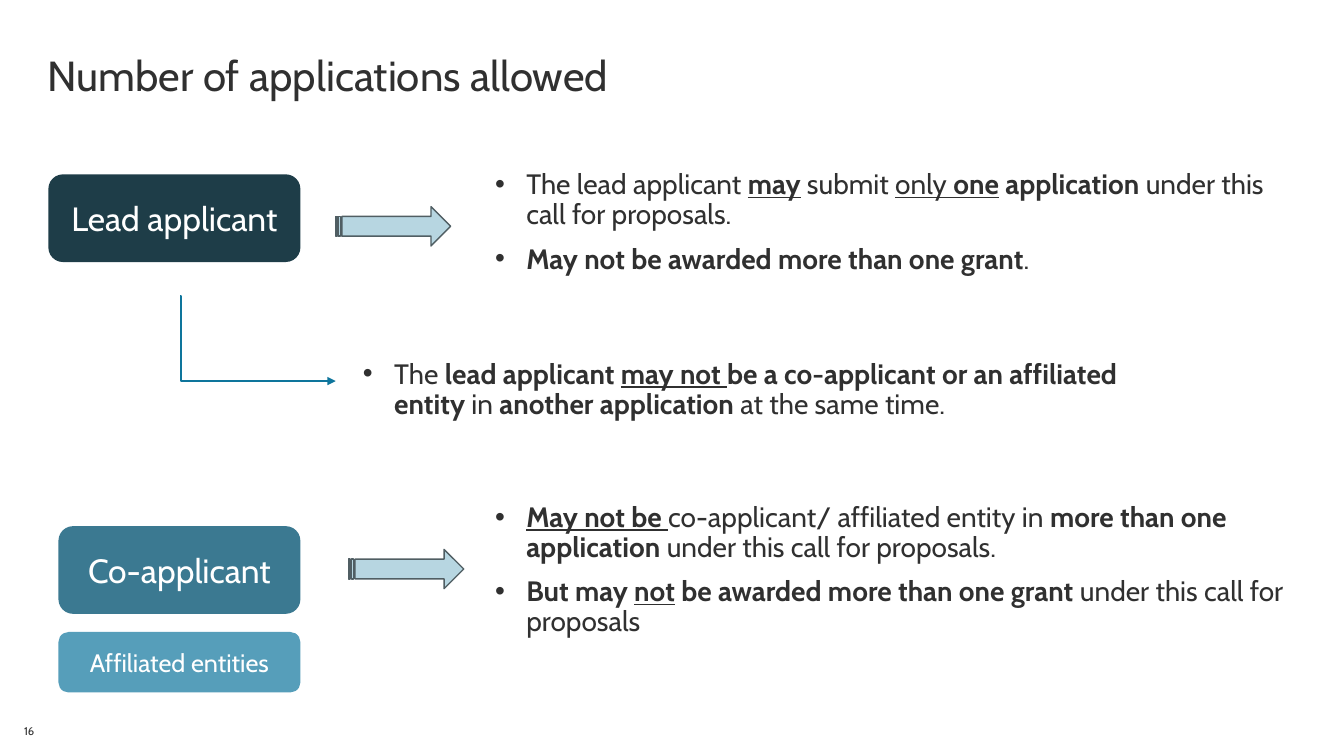
from lxml.etree import SubElement
from pptx import Presentation
from pptx.dml.color import RGBColor
from pptx.enum.shapes import MSO_CONNECTOR, MSO_SHAPE
from pptx.enum.text import MSO_ANCHOR, PP_ALIGN
from pptx.oxml.ns import qn
from pptx.util import Inches, Pt

FONT, INK, WHITE = "Cabin", "303030", "FFFFFF"

LABELS = [
    ((0.39, 0.51, 12.55, 0.58), "Number of applications allowed", 30, MSO_ANCHOR.TOP, (0.08, 0.04)),
    ((0.14, 6.97, 0.56, 0.4), "16", 8, MSO_ANCHOR.BOTTOM, (0.1, 0.05)),
]
ROLES = [
    ("Lead applicant", (0.48, 1.73, 2.5, 0.87), "1E3D48", 24),
    ("Co-applicant", (0.58, 5.22, 2.4, 0.87), "3B7991", 24),
    ("Affiliated entities", (0.58, 6.27, 2.4, 0.6), "569EBA", 18),
]
ARROWS = [((3.33, 2.05, 1.14, 0.39),), ((3.46, 5.45, 1.14, 0.39),)]
BRANCH = (1.79, 2.94, 3.33, 3.78)
RULES = [
    ((4.83, 1.65, 8.11, 1.59), [
        [("The lead applicant ", ""), ("may", "bu"), (" submit ", ""), ("only ", "u"), ("one", "bu"),
         (" application ", "b"), ("under this call for proposals.", "")],
        [("May not be awarded more than one grant", "b"), (".", "")],
    ]),
    ((3.52, 3.53, 8.11, 0.84), [
        [("The ", ""), ("lead applicant ", "b"), ("may not ", "bu"),
         ("be a co-applicant or an affiliated entity ", "b"), ("in ", ""),
         ("another application ", "b"), ("at the same time.", "")],
    ]),
    ((4.83, 4.95, 8.11, 1.59), [
        [("May not be ", "bu"), ("co-applicant/ affiliated entity in ", ""),
         ("more than one application ", "b"), ("under this call for proposals.", "")],
        [("But may ", "b"), ("not", "bu"), (" be awarded more than one grant ", "b"),
         ("under this call for proposals", "")],
    ]),
]


def color(code):
    """Turn a hex string into a colour."""
    return RGBColor.from_string(code)


def set_all(target, values):
    """Set attributes from a dict of format values."""
    for name, value in values.items():
        setattr(target, name, value)


def set_frame(box, anchor, inset):
    """Prepare the text frame of a box and return it."""
    across, down = map(Inches, inset)
    set_all(box.text_frame, {
        "word_wrap": True, "vertical_anchor": anchor, "margin_left": across,
        "margin_right": across, "margin_top": down, "margin_bottom": down})
    return box.text_frame


def add_span(para, text, size, code, style=""):
    """Add a run; style holds b for bold and u for underline."""
    span = para.add_run()
    span.text = text
    set_all(span.font, {"name": FONT, "size": Pt(size), "bold": "b" in style, "underline": "u" in style})
    span.font.color.rgb = color(code)


def add_label(page, place, text, size, anchor, inset):
    """Add a single line of text."""
    box = page.shapes.add_textbox(*map(Inches, place))
    para = set_frame(box, anchor, inset).paragraphs[0]
    para.line_spacing = 0.9
    add_span(para, text, size, INK)


def add_filled_shape(page, kind, place, code):
    """Add a preset shape with a flat fill and no line."""
    shape = page.shapes.add_shape(kind, *map(Inches, place))
    shape.shadow.inherit = False
    shape.fill.solid()
    shape.fill.fore_color.rgb = color(code)
    shape.line.fill.background()
    return shape


def add_role(page, text, place, code, size):
    """Add a rounded box naming a role."""
    shape = add_filled_shape(page, MSO_SHAPE.ROUNDED_RECTANGLE, place, code)
    para = set_frame(shape, MSO_ANCHOR.MIDDLE, (0.13, 0.13)).paragraphs[0]
    para.alignment = PP_ALIGN.CENTER
    add_span(para, text, size, WHITE)


def add_arrow(page, place):
    """Add a striped block arrow."""
    arrow = add_filled_shape(page, MSO_SHAPE.STRIPED_RIGHT_ARROW, place, "B7D6E1")
    arrow.line.color.rgb = color("505E63")
    arrow.line.width = Pt(1)


def add_branch(page, ends):
    """Add the elbow arrow that drops first and then runs right."""
    branch = page.shapes.add_connector(MSO_CONNECTOR.ELBOW, *map(Inches, ends))
    branch.line.color.rgb = color("0E759C")
    branch.line.width = Pt(1.5)
    properties = branch.element.spPr
    SubElement(properties.find(qn("a:ln")), qn("a:tailEnd"), type="triangle")
    SubElement(properties, qn("a:effectLst"))
    guides = properties.find(qn("a:prstGeom")).get_or_add_avLst()
    SubElement(guides, qn("a:gd"), name="adj1", fmla="val 400")


def add_rules(page, place, items):
    """Add a bulleted list of rules."""
    box = page.shapes.add_textbox(*map(Inches, place))
    frame = set_frame(box, MSO_ANCHOR.TOP, (0.08, 0.04))
    for index, spans in enumerate(items):
        para = frame.add_paragraph() if index else frame.paragraphs[0]
        set_all(para, {"line_spacing": 0.9, "space_before": Pt(10)})
        properties = para._p.get_or_add_pPr()
        properties.set("marL", str(Inches(0.31)))
        properties.set("indent", str(-Inches(0.31)))
        SubElement(properties, qn("a:buFont"), typeface="Arial")
        SubElement(properties, qn("a:buChar"), char="•")
        for text, style in spans:
            add_span(para, text, 20, INK, style)


def main():
    """Build the slide and save it."""
    deck = Presentation()
    set_all(deck, {"slide_width": Inches(13.33), "slide_height": Inches(7.5)})
    page = deck.slides.add_slide(deck.slide_layouts[6])
    for add, rows in ((add_label, LABELS), (add_role, ROLES), (add_arrow, ARROWS), (add_rules, RULES)):
        for row in rows:
            add(page, *row)
    add_branch(page, BRANCH)
    deck.save("out.pptx")


if __name__ == "__main__":
    main()
